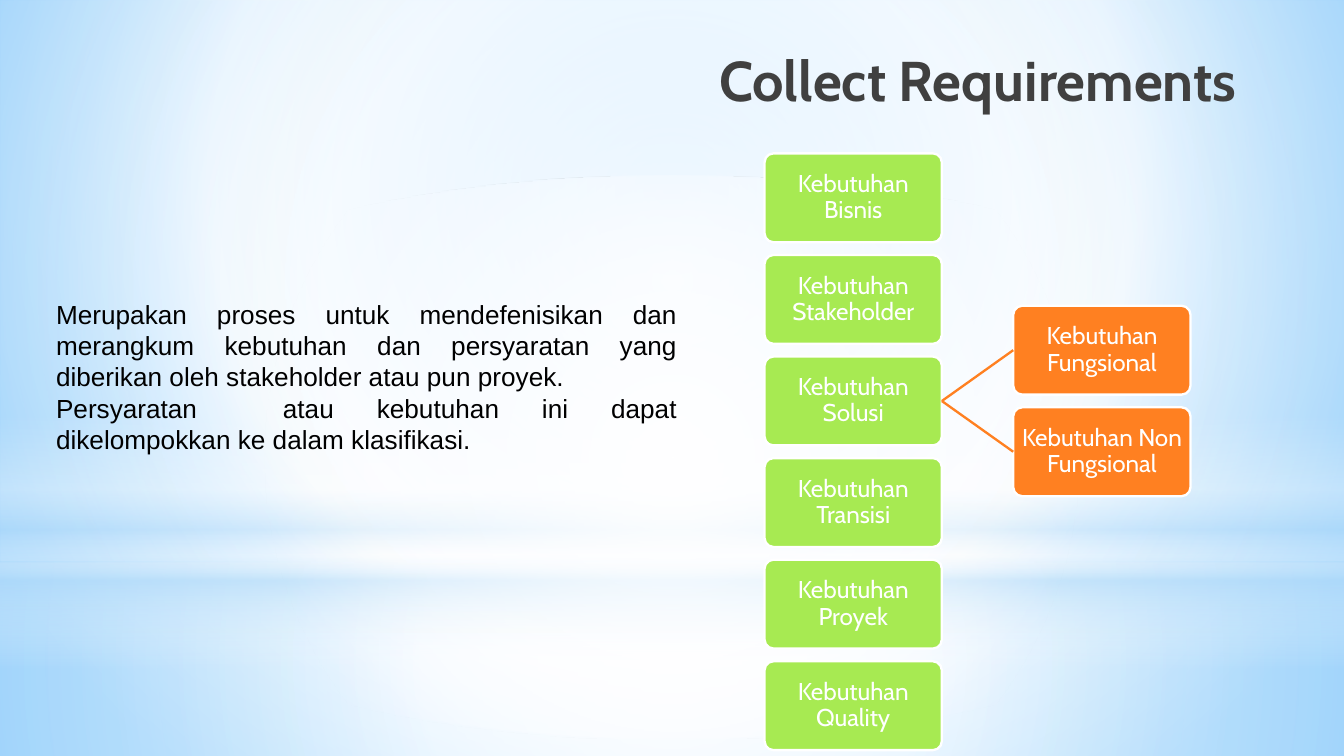
from dataclasses import dataclass

import lxml.etree
import pptx
import pptx.dml.color
import pptx.enum.shapes
import pptx.enum.text
import pptx.oxml
import pptx.oxml.ns
import pptx.util

Cm, Pt = pptx.util.Cm, pptx.util.Pt
Shape = pptx.enum.shapes.MSO_SHAPE
Align = pptx.enum.text.PP_ALIGN
Anchor = pptx.enum.text.MSO_ANCHOR
qn = pptx.oxml.ns.qn

COLORS = {
    "white": "FFFFFF", "black": "000000", "title": "404040",
    "green": "A7EA52", "orange": "FF8021",
    "sky": "9ED5FF", "blue": "5BB9FF", "mist": "B4DCFA",
}
BOX_W, BOX_H, ROW_TOP, ROW_PITCH = 3.35, 1.68, 2.9, 1.92
MAIN_LEFT, SUB_LEFT = 14.45, 19.15
CENTRE = (50, 50, 50, 50)


@dataclass
class Gradient:
    stops: list[tuple[int, str, int]]
    focus: tuple[int, int, int, int] | None = CENTRE


@dataclass
class Layer:
    kind: int
    top: float
    height: float
    gradient: Gradient


@dataclass
class Box:
    text: str
    left: float
    row: float
    color: str


BACKDROP = Gradient([(0, "sky", 100), (60, "white", 100), (100, "blue", 100)], (20, 10, 20, 60))
LAYERS = [
    Layer(Shape.RECTANGLE, 10.64, 3.65,
          Gradient([(0, "white", 91), (37, "white", 76), (100, "mist", 79)])),
    Layer(Shape.RECTANGLE, 0, 10.64,
          Gradient([(0, "white", 89), (48, "white", 62), (100, "mist", 79)])),
    Layer(Shape.RECTANGLE, 7.85, 4.78,
          Gradient([(0, "white", 0), (29, "white", 30), (45, "mist", 40),
                    (55, "white", 26), (65, "mist", 60), (100, "white", 0)], None)),
    Layer(Shape.OVAL, 3.33, 10.64, Gradient([(0, "white", 100), (56, "white", 0)])),
]
NEEDS = ["Bisnis", "Stakeholder", "Solusi", "Transisi", "Proyek", "Quality"]
SUB_NEEDS = ["Kebutuhan Fungsional", "Kebutuhan Non Fungsional"]
BODY = [
    "Merupakan proses untuk mendefenisikan dan merangkum kebutuhan dan persyaratan yang "
    "diberikan oleh stakeholder atau pun proyek. ",
    "Persyaratan  atau kebutuhan ini dapat dikelompokkan ke dalam klasifikasi.",
]


def rgb(name: str) -> pptx.dml.color.RGBColor:
    """Return the named colour."""
    return pptx.dml.color.RGBColor.from_string(COLORS[name])


def set_gradient(parent, gradient: Gradient) -> None:
    """Replace the solid fill of a properties element with a gradient."""
    stops = "".join(
        f'<a:gs pos="{pos * 1000}"><a:srgbClr val="{COLORS[name]}">'
        f'<a:alpha val="{alpha * 1000}"/></a:srgbClr></a:gs>'
        for pos, name, alpha in gradient.stops
    )
    if gradient.focus:
        sides = " ".join(f'{k}="{v * 1000}"' for k, v in zip("ltrb", gradient.focus))
        shade = f'<a:path path="circle"><a:fillToRect {sides}/></a:path>'
    else:
        shade = '<a:lin ang="5400000" scaled="0"/>'
    xml = (f'<a:gradFill {pptx.oxml.ns.nsdecls("a")} rotWithShape="1">'
           f'<a:gsLst>{stops}</a:gsLst>{shade}</a:gradFill>')
    parent.replace(parent.find(qn("a:solidFill")), pptx.oxml.parse_xml(xml))


def add_layer(s, layer: Layer) -> None:
    """Draw one full-width translucent layer."""
    sp = s.shapes.add_shape(layer.kind, 0, Cm(layer.top), Cm(25.4), Cm(layer.height))
    sp.shadow.inherit = False
    sp.line.fill.background()
    sp.fill.solid()
    set_gradient(sp.element.spPr, layer.gradient)


def format_text(tf, font: str, size: float, color: str, align: int, bold: bool = False) -> None:
    """Format every paragraph and run of a text frame."""
    tf.word_wrap = True
    for p in tf.paragraphs:
        p.alignment = align
        for r in p.runs:
            r.font.name, r.font.size, r.font.bold = font, Pt(size), bold
            r.font.color.rgb = rgb(color)


def add_box(s, box: Box):
    """Draw one labelled rounded box."""
    sp = s.shapes.add_shape(Shape.ROUNDED_RECTANGLE, Cm(box.left),
                            Cm(ROW_TOP + box.row * ROW_PITCH), Cm(BOX_W), Cm(BOX_H))
    sp.adjustments[0] = 0.1
    sp.shadow.inherit = False
    sp.fill.solid()
    sp.fill.fore_color.rgb = rgb(box.color)
    sp.line.color.rgb = rgb("white")
    sp.line.width = Pt(1.25)
    tf = sp.text_frame
    tf.text = box.text
    tf.margin_left = tf.margin_right = tf.margin_top = tf.margin_bottom = Cm(0.03)
    tf.vertical_anchor = Anchor.MIDDLE
    format_text(tf, "Cabin", 13, "white", Align.CENTER)
    tf.paragraphs[0].line_spacing = 0.9
    return sp


def add_link(s, start, end) -> None:
    """Join the right side of one box to the left side of another."""
    link = s.shapes.add_connector(pptx.enum.shapes.MSO_CONNECTOR.STRAIGHT, 0, 0, 0, 0)
    link.begin_connect(start, 3)
    link.end_connect(end, 1)
    link.line.color.rgb = rgb("orange")
    link.line.width = Pt(1.25)
    lxml.etree.SubElement(link.element.spPr, qn("a:effectLst"))


def main() -> None:
    """Build the slide and save it."""
    prs = pptx.Presentation()
    prs.slide_width, prs.slide_height = Cm(25.4), Cm(14.29)
    s = prs.slides.add_slide(prs.slide_layouts[6])
    s.background.fill.solid()
    set_gradient(s.element.find(".//" + qn("p:bgPr")), BACKDROP)
    for layer in LAYERS:
        add_layer(s, layer)

    tf = s.shapes.add_textbox(Cm(1.14), Cm(0.79), Cm(22.48), Cm(1.6)).text_frame
    tf.text = "Collect Requirements"
    tf.margin_top = tf.margin_bottom = Cm(0.25)
    tf.vertical_anchor = Anchor.BOTTOM
    format_text(tf, "Cabin", 30, "title", Align.RIGHT, bold=True)

    tf = s.shapes.add_textbox(Cm(0.81), Cm(5.51), Cm(12.24), Cm(3.25)).text_frame
    tf.text = "\n".join(BODY)
    format_text(tf, "Arial", 14, "black", Align.JUSTIFY)

    needs = {name: add_box(s, Box(f"Kebutuhan {name}", MAIN_LEFT, row, "green"))
             for row, name in enumerate(NEEDS)}
    for i, text in enumerate(SUB_NEEDS):
        sub = add_box(s, Box(text, SUB_LEFT, i + 1.5, "orange"))
        add_link(s, needs["Solusi"], sub)

    prs.save("out.pptx")


if __name__ == "__main__":
    main()
